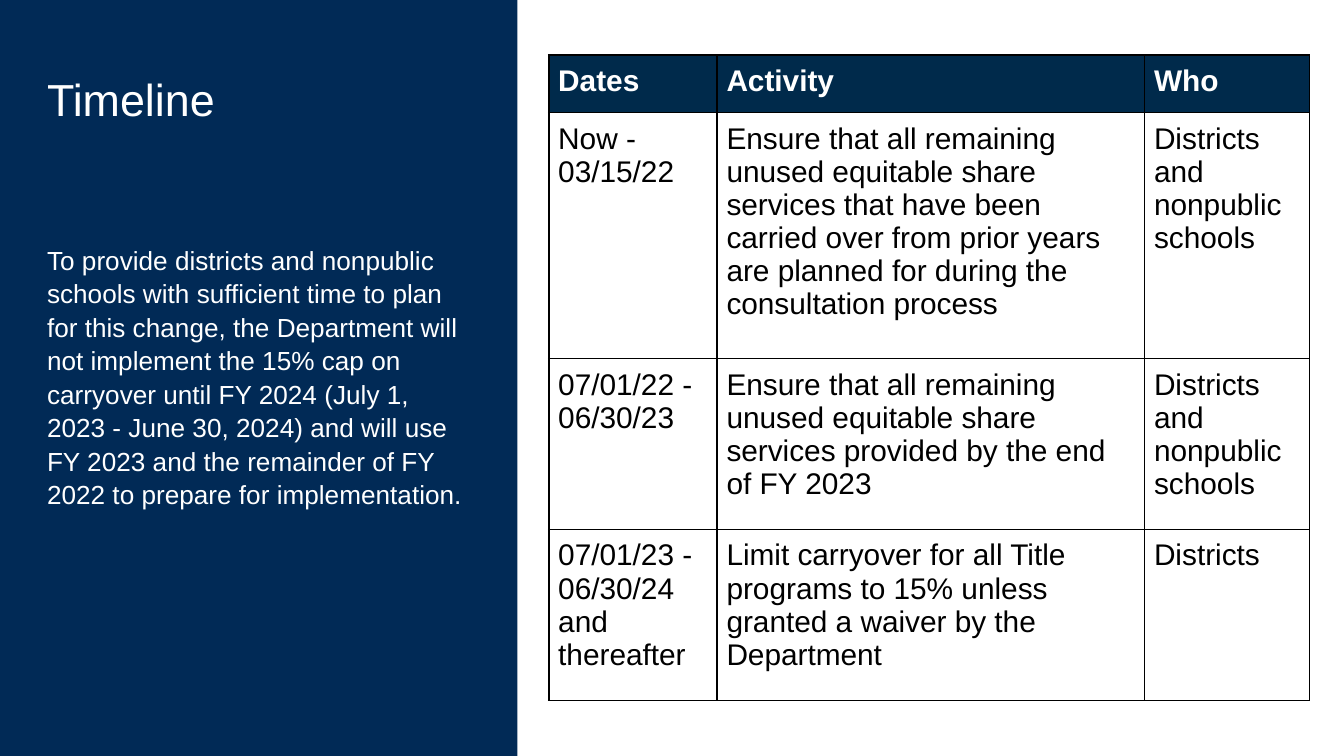
from lxml import etree
from pptx import Presentation
from pptx.dml.color import RGBColor
from pptx.enum.shapes import MSO_SHAPE
from pptx.enum.text import MSO_ANCHOR, MSO_AUTO_SIZE, PP_ALIGN
from pptx.oxml.ns import qn
from pptx.util import Cm, Pt

RECTANGLE = MSO_SHAPE.RECTANGLE
TOP = MSO_ANCHOR.TOP
NO_AUTOFIT = MSO_AUTO_SIZE.NONE
LEFT = PP_ALIGN.LEFT

PANEL_NAVY = RGBColor(0x01, 0x2A, 0x56)
HEADER_NAVY = RGBColor(0x00, 0x2A, 0x4B)
WHITE = RGBColor(0xFF, 0xFF, 0xFF)
BLACK = RGBColor(0x00, 0x00, 0x00)

FONT = "Arial"
TITLE_ONLY = 5
PANEL_TEXT_LEFT = Cm(0.64)
PANEL_TEXT_WIDTH = Cm(8.46)

EXPLANATION = (
    "To provide districts and nonpublic schools with sufficient time to plan "
    "for this change, the Department will not implement the 15% cap on "
    "carryover until FY 2024 (July 1, 2023 - June 30, 2024) and will use "
    "FY 2023 and the remainder of FY 2022 to prepare for implementation."
)
COLUMN_WIDTHS = [Cm(3.18), Cm(8.08), Cm(3.12)]
ROW_HEIGHTS = [Cm(1.09), Cm(4.65), Cm(3.23), Cm(3.23)]
TIMELINE = [
    ("Dates", "Activity", "Who"),
    (
        "Now - 03/15/22",
        "Ensure that all remaining unused equitable share services that have "
        "been carried over from prior years are planned for during the "
        "consultation process",
        "Districts and nonpublic schools",
    ),
    (
        "07/01/22 - 06/30/23",
        "Ensure that all remaining unused equitable share services provided "
        "by the end of FY 2023",
        "Districts and nonpublic schools",
    ),
    (
        "07/01/23 - 06/30/24 and thereafter",
        "Limit carryover for all Title programs to 15% unless granted a "
        "waiver by the Department",
        "Districts",
    ),
]


def write_text(frame, text, size, color, bold=False):
    frame.text = text
    para = frame.paragraphs[0]
    para.alignment = LEFT
    for span in para.runs:
        span.font.name = FONT
        span.font.size = Pt(size)
        span.font.bold = bold
        span.font.color.rgb = color


def fill_panel_text(box, top, height, text, size):
    box.left, box.top = PANEL_TEXT_LEFT, top
    box.width, box.height = PANEL_TEXT_WIDTH, height
    frame = box.text_frame
    frame.word_wrap = True
    frame.auto_size = NO_AUTOFIT
    frame.vertical_anchor = TOP
    frame.margin_left = frame.margin_right = Cm(0.25)
    frame.margin_top = frame.margin_bottom = Cm(0.25)
    write_text(frame, text, size, WHITE)
    frame.paragraphs[0].line_spacing = 1.07


def add_panel(page, height):
    """Add the navy side panel behind the title."""
    panel = page.shapes.add_shape(RECTANGLE, Cm(-0.05), 0, Cm(9.83), height)
    panel.shadow.inherit = False
    panel.fill.solid()
    panel.fill.fore_color.rgb = PANEL_NAVY
    panel.line.fill.background()
    page.shapes.title.element.addprevious(panel.element)


def add_borders(cell):
    properties = cell._tc.get_or_add_tcPr()
    for index, side in enumerate(("a:lnL", "a:lnR", "a:lnT", "a:lnB")):
        line = etree.Element(qn(side), w=str(Pt(1)))
        fill = etree.SubElement(line, qn("a:solidFill"))
        etree.SubElement(fill, qn("a:srgbClr"), val=str(BLACK))
        properties.insert(index, line)


def format_cell(cell, text, is_header):
    cell.margin_left = cell.margin_right = Cm(0.18)
    cell.margin_top = cell.margin_bottom = Cm(0.18)
    cell.vertical_anchor = TOP
    if is_header:
        cell.fill.solid()
        cell.fill.fore_color.rgb = HEADER_NAVY
    else:
        cell.fill.background()
    write_text(cell.text_frame, text, 16, WHITE if is_header else BLACK, is_header)
    add_borders(cell)


def add_timeline_table(page):
    table = page.shapes.add_table(
        len(ROW_HEIGHTS), len(COLUMN_WIDTHS), Cm(10.37), Cm(1.04),
        sum(COLUMN_WIDTHS), sum(ROW_HEIGHTS),
    ).table
    table.horz_banding = False
    for column, width in zip(table.columns, COLUMN_WIDTHS):
        column.width = width
    for index, (row, height) in enumerate(zip(table.rows, ROW_HEIGHTS)):
        row.height = height
        for cell, text in zip(row.cells, TIMELINE[index]):
            format_cell(cell, text, is_header=index == 0)


def main():
    deck = Presentation()
    deck.slide_width, deck.slide_height = Cm(25.4), Cm(14.29)
    page = deck.slides.add_slide(deck.slide_layouts[TITLE_ONLY])
    add_panel(page, deck.slide_height)
    fill_panel_text(page.shapes.title, Cm(1.04), Cm(2.77), "Timeline", 24)
    body = page.shapes.add_textbox(0, 0, 0, 0)
    fill_panel_text(body, Cm(4.32), Cm(8.92), EXPLANATION, 14)
    add_timeline_table(page)
    deck.save("out.pptx")


if __name__ == "__main__":
    main()
